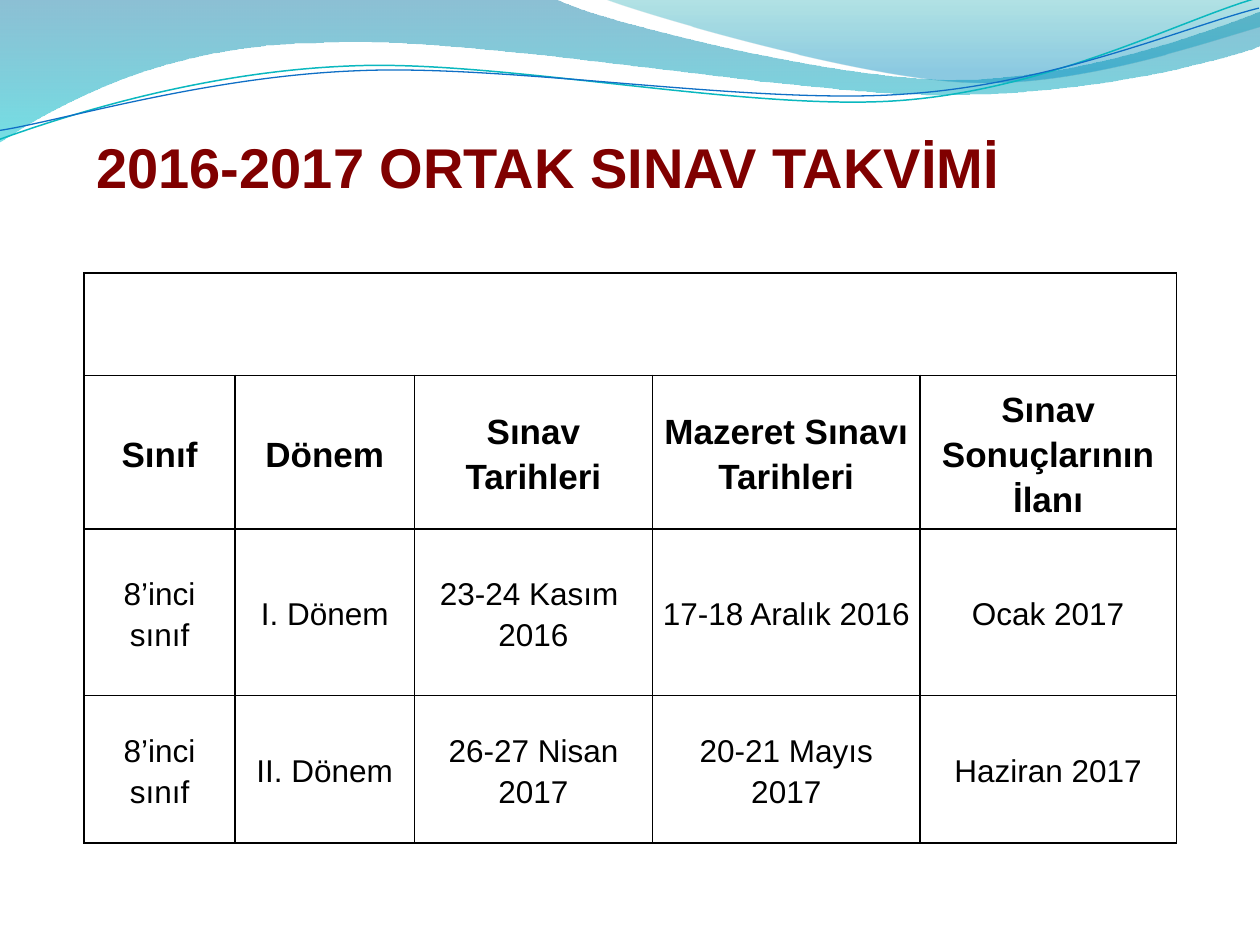
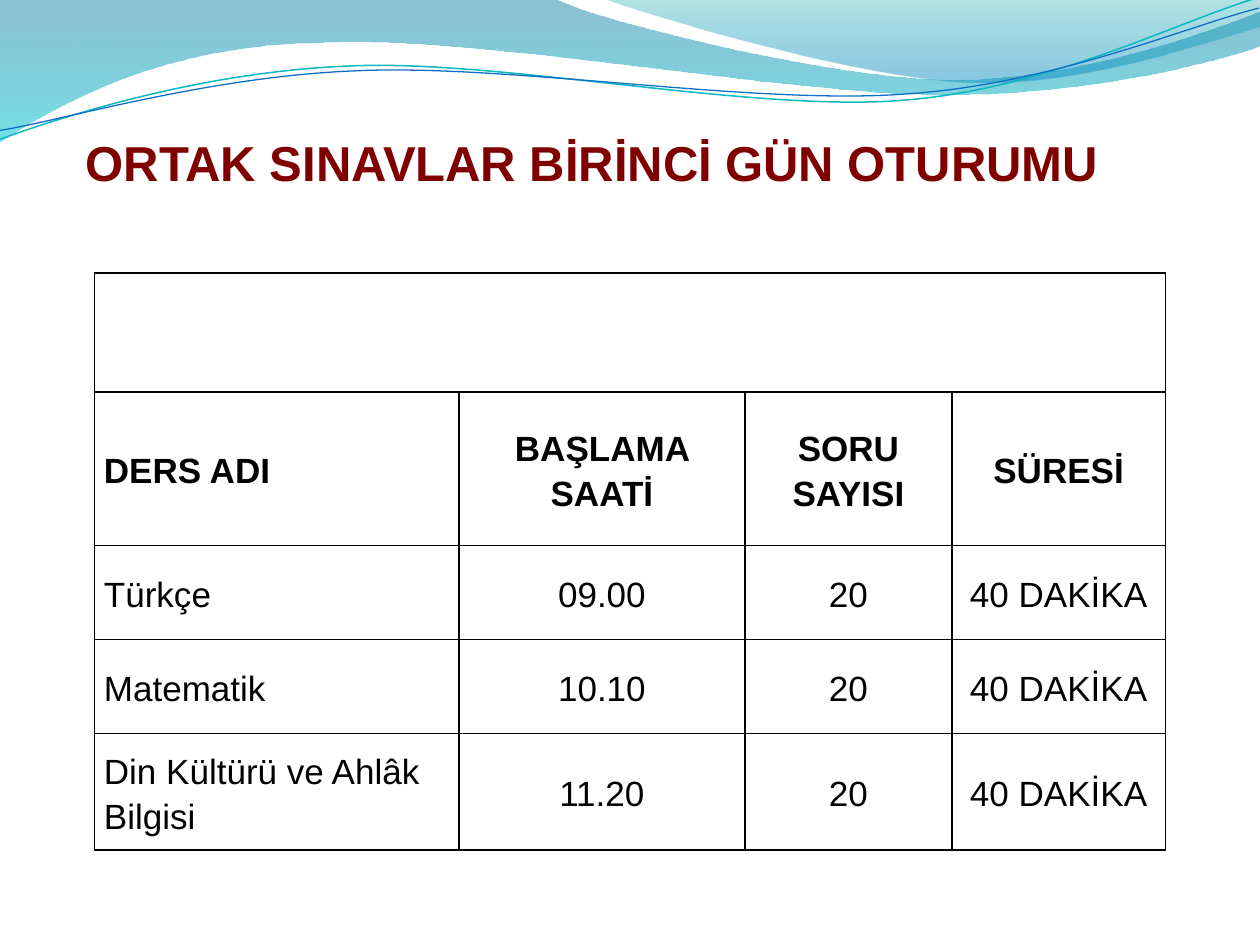
import pptx
import pptx.util
import pptx.dml.color
import pptx.enum.text
import pptx.oxml.ns
from lxml import etree

RGB = pptx.dml.color.RGBColor
ALIGN = pptx.enum.text.PP_ALIGN
MIDDLE = pptx.enum.text.MSO_ANCHOR.MIDDLE
GROW = pptx.enum.text.MSO_AUTO_SIZE.SHAPE_TO_FIT_TEXT
Pt = pptx.util.Pt
qn = pptx.oxml.ns.qn

BLACK = RGB(0x00, 0x00, 0x00)
MAROON = RGB(0x80, 0x00, 0x00)
DEEP_BLUE = RGB(0x00, 0x74, 0xA1)
AQUA = RGB(0x00, 0xC6, 0xCF)
TEAL = RGB(0x00, 0xA1, 0xA9)
SKY = RGB(0x00, 0x8B, 0xBF)
TEAL_LINE = RGB(0x0A, 0xB8, 0xBF)
BLUE_LINE = RGB(0x0F, 0x6F, 0xC6)
FONT = "Arial"

prs = pptx.Presentation()
prs.slide_width = pptx.util.Inches(10)
prs.slide_height = pptx.util.Inches(7.5)
TENTH = prs.slide_width / 10
COL = prs.slide_width / 120
ROW = prs.slide_height / 90
TABLE_TOP = 26
LINE_TILT = 357.3

# Waves of the header: a start, then straight (1 point) or cubic (3 points) pieces,
# all in tenths of the slide width
BANDS = [
    ((0, -0.01),
     [[(4.4, -0.01)],
      [(4.76, 0.17), (6.64, 0.63), (7.58, 0.63)],
      [(8.53, 0.63), (9.58, 0.26), (10, 0.09)],
      [(10.01, 0.36)],
      [(9.83, 0.44), (8.7, 0.76), (7.46, 0.75)],
      [(6.22, 0.75), (3.82, 0.28), (2.57, 0.34)],
      [(1.29, 0.35), (0.46, 0.83), (-0.01, 1.13)]],
     [(0, DEEP_BLUE, 45), (1, AQUA, 55)]),
    ((4.79, -0.01),
     [[(5.09, 0.11), (6.82, 0.62), (7.69, 0.65)],
      [(8.56, 0.69), (9.61, 0.32), (10, 0.21)],
      [(10, 0)]],
     [(0, TEAL, 30), (0.8, SKY, 45)]),
]
# Thin lines, before they are tilted
LINES = [
    ((-0.02, 0.87),
     [[(0.47, 0.72), (1.58, 0.41), (2.78, 0.42)],
      [(3.96, 0.42), (5.91, 0.93), (7.12, 0.9)],
      [(8.32, 0.87), (9.4, 0.36), (10, 0.22)]],
     TEAL_LINE, 0.85),
    ((-0.02, 0.8),
     [[(0.46, 0.75), (1.64, 0.45), (2.83, 0.46)],
      [(4.03, 0.46), (5.96, 0.88), (7.16, 0.85)],
      [(8.35, 0.83), (9.42, 0.42), (10.01, 0.3)]],
     BLUE_LINE, 0.75),
]

# Slide contents, with lengths in grid columns and rows
SLIDES = [
    dict(title="2016-2017 ORTAK SINAV TAKVİMİ", title_size=32,
         title_box=(8, 12, 92, 7.7), table_left=8,
         widths=[14.4, 17.06, 22.7, 25.46, 24.42],
         heights=[9.75, 14.65, 15.85, 14.04],
         first_align=ALIGN.CENTER, body_size=18, body_after=10,
         rows=[
             ["Sınıf", "Dönem", "Sınav Tarihleri", "Mazeret Sınavı Tarihleri",
              "Sınav Sonuçlarının İlanı"],
             ["8’inci sınıf", "I. Dönem", "23-24 Kasım  2016", "17-18 Aralık 2016",
              "Ocak 2017"],
             ["8’inci sınıf", "II. Dönem", "26-27 Nisan 2017", "20-21 Mayıs 2017",
              "Haziran 2017"]]),
    dict(title="ORTAK SINAVLAR BİRİNCİ GÜN OTURUMU", title_size=28,
         title_box=(7, 12, 103, 6.8), table_left=9,
         widths=[34.7, 27.26, 19.7, 20.34],
         heights=[11.32, 14.65, 8.95, 8.95, 11.1],
         first_align=ALIGN.LEFT, body_size=20, body_after=0,
         rows=[
             ["DERS ADI", "BAŞLAMA SAATİ", "SORU SAYISI", "SÜRESİ"],
             ["Türkçe", "09.00", "20", "40 DAKİKA"],
             ["Matematik", "10.10", "20", "40 DAKİKA"],
             ["Din Kültürü ve Ahlâk Bilgisi", "11.20", "20", "40 DAKİKA"]]),
]


def write(tf, text, size, color=BLACK, bold=False, align=ALIGN.LEFT,
          line_spacing=1.0, after=0):
    tf.word_wrap = True
    p = tf.paragraphs[0]
    p.alignment = align
    p.line_spacing = line_spacing
    p.space_after = Pt(after)
    r = p.add_run()
    r.text = text
    r.font.name = FONT
    r.font.size = Pt(size)
    r.font.bold = bold
    r.font.color.rgb = color


def draw_wave(s, start, pieces, closed):
    fb = s.shapes.build_freeform(round(start[0] * TENTH), round(start[1] * TENTH))
    fb.add_line_segments([(round(x * TENTH), round(y * TENTH))
                          for piece in pieces for x, y in piece], close=closed)
    sp = fb.convert_to_shape()
    sp.shadow.inherit = False
    # Join the three segments of each cubic piece into one curve
    segments = iter(list(sp.element.iter(qn("a:lnTo"))))
    for piece in pieces:
        group = [next(segments) for _ in piece]
        if len(group) == 3:
            curve = etree.Element(qn("a:cubicBezTo"))
            group[0].addprevious(curve)
            for segment in group:
                curve.append(segment[0])
                segment.getparent().remove(segment)
    return sp


# Header waves, drawn once and moved to the layout that both slides share
layout = prs.slide_layouts[6]
slides = [prs.slides.add_slide(layout) for _ in SLIDES]
waves = []
for start, pieces, stops in BANDS:
    sp = draw_wave(slides[0], start, pieces, True)
    sp.line.fill.background()
    sp.fill.gradient()
    sp.fill.gradient_angle = 270
    for stop, (position, color, opacity) in zip(sp.fill.gradient_stops, stops):
        stop.position = position
        stop.color.rgb = color
    for clr, (_, _, opacity) in zip(sp.element.spPr.iter(qn("a:srgbClr")), stops):
        etree.SubElement(clr, qn("a:alpha"), val=str(opacity * 1000))
    waves.append(sp)
for start, pieces, color, width in LINES:
    sp = draw_wave(slides[0], start, pieces, False)
    sp.rotation = LINE_TILT
    sp.fill.background()
    sp.line.color.rgb = color
    sp.line.width = Pt(width)
    waves.append(sp)
for placeholder in list(layout.placeholders):
    layout.shapes.element.remove(placeholder.element)
for sp in waves:
    layout.shapes.element.append(sp.element)

for s, content in zip(slides, SLIDES):
    # Title
    left, top, width, height = content["title_box"]
    box = s.shapes.add_textbox(round(left * COL), round(top * ROW),
                               round(width * COL), round(height * ROW))
    write(box.text_frame, content["title"], content["title_size"], color=MAROON, bold=True)
    box.text_frame.auto_size = GROW

    # Table
    widths, heights = content["widths"], content["heights"]
    table = s.shapes.add_table(
        len(heights), len(widths), round(content["table_left"] * COL),
        round(TABLE_TOP * ROW), round(sum(widths) * COL), round(sum(heights) * ROW)).table
    table.first_row = table.horz_banding = False
    for column, width in zip(table.columns, widths):
        column.width = round(width * COL)
    for row, height in zip(table.rows, heights):
        row.height = round(height * ROW)
    for cell in table.iter_cells():
        cell.fill.background()
        cell.vertical_anchor = MIDDLE
        cell.margin_left = cell.margin_right = Pt(5.4)
        cell.margin_top = cell.margin_bottom = 0
        tcPr = cell._tc.get_or_add_tcPr()
        for i, side in enumerate(("a:lnL", "a:lnR", "a:lnT", "a:lnB")):
            ln = etree.Element(qn(side), w=str(Pt(1)))
            fill = etree.SubElement(ln, qn("a:solidFill"))
            etree.SubElement(fill, qn("a:srgbClr"), val=str(BLACK))
            tcPr.insert(i, ln)
    table.cell(0, 0).merge(table.cell(0, len(widths) - 1))
    for i, texts in enumerate(content["rows"]):
        header = i == 0
        for j, text in enumerate(texts):
            write(table.cell(i + 1, j).text_frame, text,
                  20 if header else content["body_size"], bold=header,
                  align=content["first_align"] if j == 0 else ALIGN.CENTER,
                  line_spacing=1.15, after=0 if header else content["body_after"])

prs.save("out.pptx")
